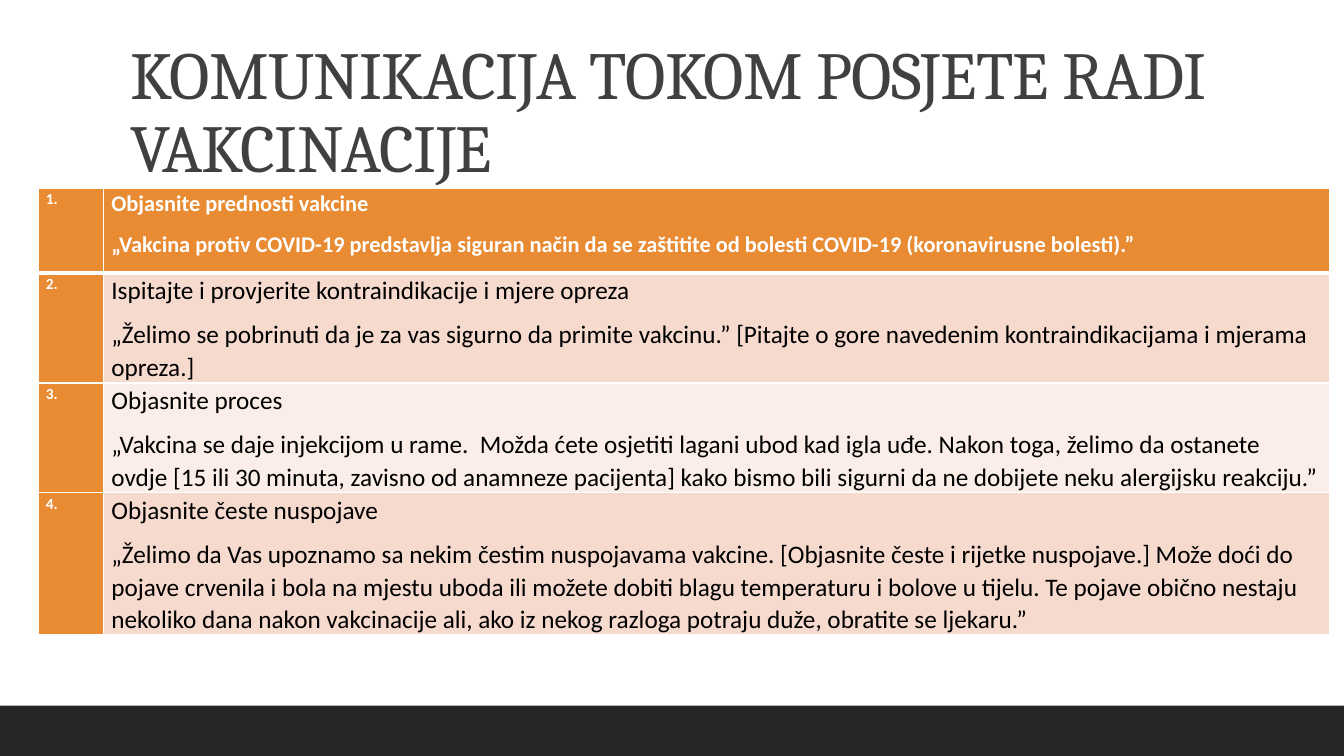
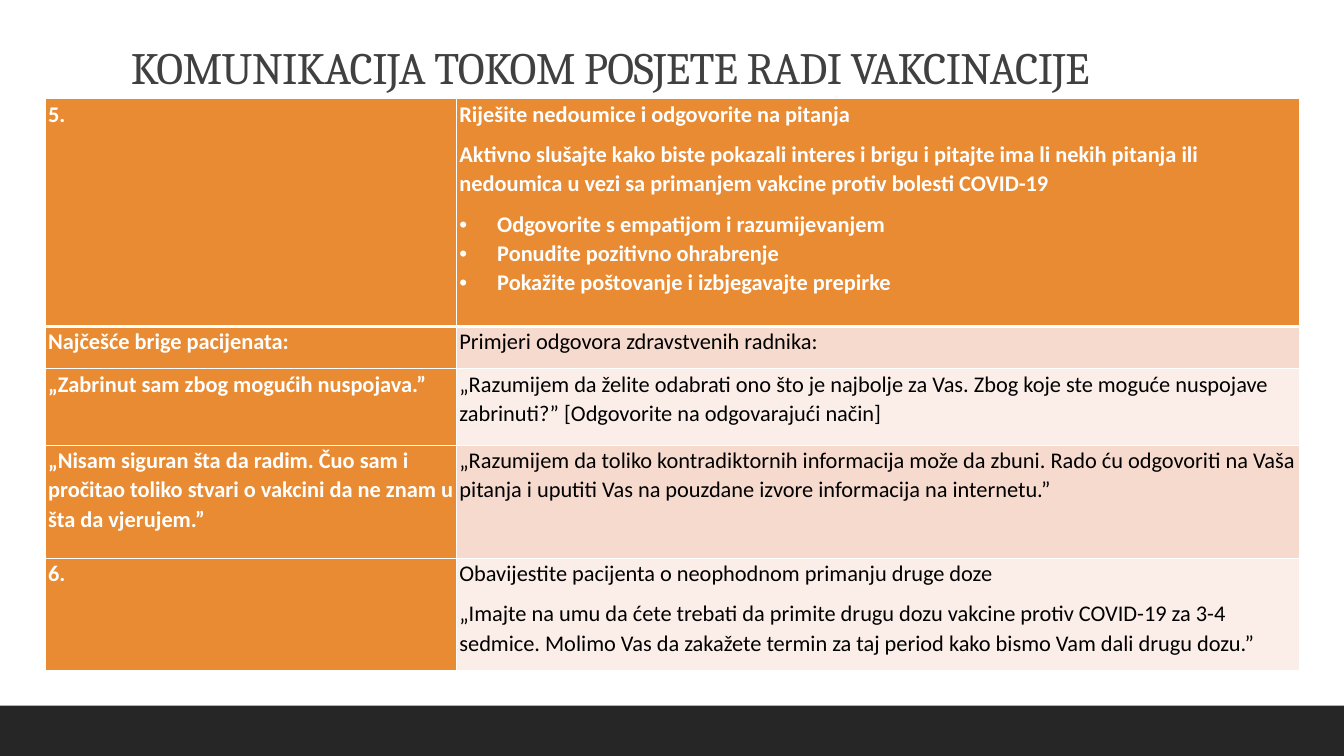
import pptx
import pptx.dml.color
import pptx.enum.shapes
import pptx.enum.text
import pptx.oxml
import pptx.oxml.ns
import pptx.util

Pt = pptx.util.Pt
COLORS = {
    "band": "262626",
    "title": "404040",
    "accent": "E88B33",
    "tint": "F6DACE",
    "pale": "FBEEE8",
    "white": "FFFFFF",
    "black": "000000",
}
TITLE = "KOMUNIKACIJA TOKOM POSJETE RADI VAKCINACIJE"
TITLE_FONT, BODY_FONT = "Cambria", "Calibri"
BULLET = "•"
BULLET_INDENT = Pt(27)
NAMESPACE = pptx.oxml.ns.nsdecls("a")

# Each row is (height, label, paragraphs); paragraphs that start with • are bullets.
SLIDES = [
    {
        "title_size": 48, "title_height": 114.5,
        "left": 27.4, "top": 134.6, "columns": [46.8, 875.5], "inset": 5.4,
        "label_size": 11, "header_size": 16, "body_size": 18,
        "rows": [
            (60.5, "1.", [
                "Objasnite prednosti vakcine",
                "„Vakcina protiv COVID-19 predstavlja siguran način da se zaštitite od bolesti "
                "COVID-19 (koronavirusne bolesti).”",
            ]),
            (78.5, "2.", [
                "Ispitajte i provjerite kontraindikacije i mjere opreza",
                "„Želimo se pobrinuti da je za vas sigurno da primite vakcinu.” [Pitajte o gore "
                "navedenim kontraindikacijama i mjerama opreza.]",
            ]),
            (78.5, "3.", [
                "Objasnite proces",
                "„Vakcina se daje injekcijom u rame.  Možda ćete osjetiti lagani ubod kad igla uđe. "
                "Nakon toga, želimo da ostanete ovdje [15 ili 30 minuta, zavisno od anamneze "
                "pacijenta] kako bismo bili sigurni da ne dobijete neku alergijsku reakciju.”",
            ]),
            (101.5, "4.", [
                "Objasnite česte nuspojave",
                "„Želimo da Vas upoznamo sa nekim čestim nuspojavama vakcine. [Objasnite česte i "
                "rijetke nuspojave.] Može doći do pojave crvenila i bola na mjestu uboda ili možete "
                "dobiti blagu temperaturu i bolove u tijelu. Te pojave obično nestaju nekoliko dana "
                "nakon vakcinacije ali, ako iz nekog razloga potraju duže, obratite se ljekaru.”",
            ]),
        ],
    },
    {
        "title_size": 32, "title_height": 48.2,
        "left": 32.4, "top": 70.6, "columns": [293.8, 601.9], "inset": 2,
        "label_size": 16, "header_size": 16, "body_size": 16,
        "rows": [
            (162.7, "5.", [
                "Riješite nedoumice i odgovorite na pitanja",
                "Aktivno slušajte kako biste pokazali interes i brigu i pitajte ima li nekih pitanja "
                "ili nedoumica u vezi sa primanjem vakcine protiv bolesti COVID-19",
                "•Odgovorite s empatijom i razumijevanjem",
                "•Ponudite pozitivno ohrabrenje",
                "•Pokažite poštovanje i izbjegavajte prepirke",
            ]),
            (30.2, "Najčešće brige pacijenata:", ["Primjeri odgovora zdravstvenih radnika:"]),
            (54.7, "„Zabrinut sam zbog mogućih nuspojava.”", [
                "„Razumijem da želite odabrati ono što je najbolje za Vas. Zbog koje ste moguće "
                "nuspojave zabrinuti?” [Odgovorite na odgovarajući način]",
            ]),
            (80.6, "„Nisam siguran šta da radim. Čuo sam i pročitao toliko stvari o vakcini da ne "
                   "znam u šta da vjerujem.”", [
                "„Razumijem da toliko kontradiktornih informacija može da zbuni. Rado ću odgovoriti "
                "na Vaša pitanja i uputiti Vas na pouzdane izvore informacija na internetu.”",
            ]),
            (80.6, "6.", [
                "Obavijestite pacijenta o neophodnom primanju druge doze",
                "„Imajte na umu da ćete trebati da primite drugu dozu vakcine protiv COVID-19 za 3-4 "
                "sedmice. Molimo Vas da zakažete termin za taj period kako bismo Vam dali drugu dozu.”",
            ]),
        ],
    },
]


def add_run(paragraph, text, font_name, size, color, bold=False):
    run = paragraph.add_run()
    run.text = text
    run.font.name = font_name
    run.font.size = Pt(size)
    run.font.bold = bold
    run.font.color.rgb = pptx.dml.color.RGBColor.from_string(COLORS[color])
    return run


def fill_cell(cell, texts, size, inset, fill, row_index):
    """Style one table cell; accent cells get bold white text, the header a thick lower edge."""
    properties = cell._tc.get_or_add_tcPr()
    widths = {"lnL": 1, "lnR": 1, "lnT": 3 if row_index == 1 else 1, "lnB": 3 if row_index == 0 else 1}
    for edge, width in widths.items():
        properties.append(pptx.oxml.parse_xml(
            f'<a:{edge} {NAMESPACE} w="{Pt(width)}"><a:solidFill>'
            f'<a:srgbClr val="{COLORS["white"]}"/></a:solidFill></a:{edge}>'))
    cell.fill.solid()
    cell.fill.fore_color.rgb = pptx.dml.color.RGBColor.from_string(COLORS[fill])
    cell.margin_left = cell.margin_right = Pt(inset)
    cell.margin_top = cell.margin_bottom = 0

    on_accent = fill == "accent"
    for index, text in enumerate(texts):
        paragraph = cell.text_frame.paragraphs[0] if index == 0 else cell.text_frame.add_paragraph()
        is_bullet = text.startswith(BULLET)
        paragraph.line_spacing = 1.07
        paragraph.space_after = Pt(0 if is_bullet and index < len(texts) - 1 else 8)
        if is_bullet:
            paragraph_properties = paragraph._p.get_or_add_pPr()
            paragraph_properties.set("marL", str(BULLET_INDENT))
            paragraph_properties.set("indent", str(-BULLET_INDENT))
            paragraph_properties.append(pptx.oxml.parse_xml(
                f'<a:buFont {NAMESPACE} typeface="Arial"/>'))
            paragraph_properties.append(pptx.oxml.parse_xml(
                f'<a:buChar {NAMESPACE} char="{BULLET}"/>'))
        add_run(paragraph, text.removeprefix(BULLET), BODY_FONT, size,
                "white" if on_accent else "black", on_accent)


presentation = pptx.Presentation()
presentation.slide_width = Pt(960)
presentation.slide_height = Pt(540)

for content in SLIDES:
    slide = presentation.slides.add_slide(presentation.slide_layouts[6])

    band = slide.shapes.add_shape(
        pptx.enum.shapes.MSO_SHAPE.RECTANGLE, 0, Pt(504), Pt(960), Pt(36))
    band.shadow.inherit = False
    band.fill.solid()
    band.fill.fore_color.rgb = pptx.dml.color.RGBColor.from_string(COLORS["band"])
    band.line.fill.background()

    title = slide.shapes.add_textbox(Pt(86.4), Pt(22.3), Pt(792), Pt(content["title_height"]))
    title.text_frame.word_wrap = True
    title.text_frame.vertical_anchor = pptx.enum.text.MSO_ANCHOR.BOTTOM
    title_paragraph = title.text_frame.paragraphs[0]
    title_paragraph.line_spacing = 0.9
    title_run = add_run(title_paragraph, TITLE, TITLE_FONT, content["title_size"], "title")
    title_run.font._element.set("spc", "-50")

    rows, columns = content["rows"], content["columns"]
    table = slide.shapes.add_table(
        len(rows), len(columns), Pt(content["left"]), Pt(content["top"]),
        Pt(sum(columns)), Pt(sum(row[0] for row in rows))).table
    for column, width in zip(table.columns, columns):
        column.width = Pt(width)
    for row_index, (height, label, texts) in enumerate(rows):
        table.rows[row_index].height = Pt(height)
        if row_index == 0:
            body_fill, body_size = "accent", content["header_size"]
        else:
            body_fill, body_size = ("pale", "tint")[row_index % 2], content["body_size"]
        fill_cell(table.cell(row_index, 0), [label], content["label_size"],
                  content["inset"], "accent", row_index)
        fill_cell(table.cell(row_index, 1), texts, body_size,
                  content["inset"], body_fill, row_index)

presentation.save("out.pptx")
